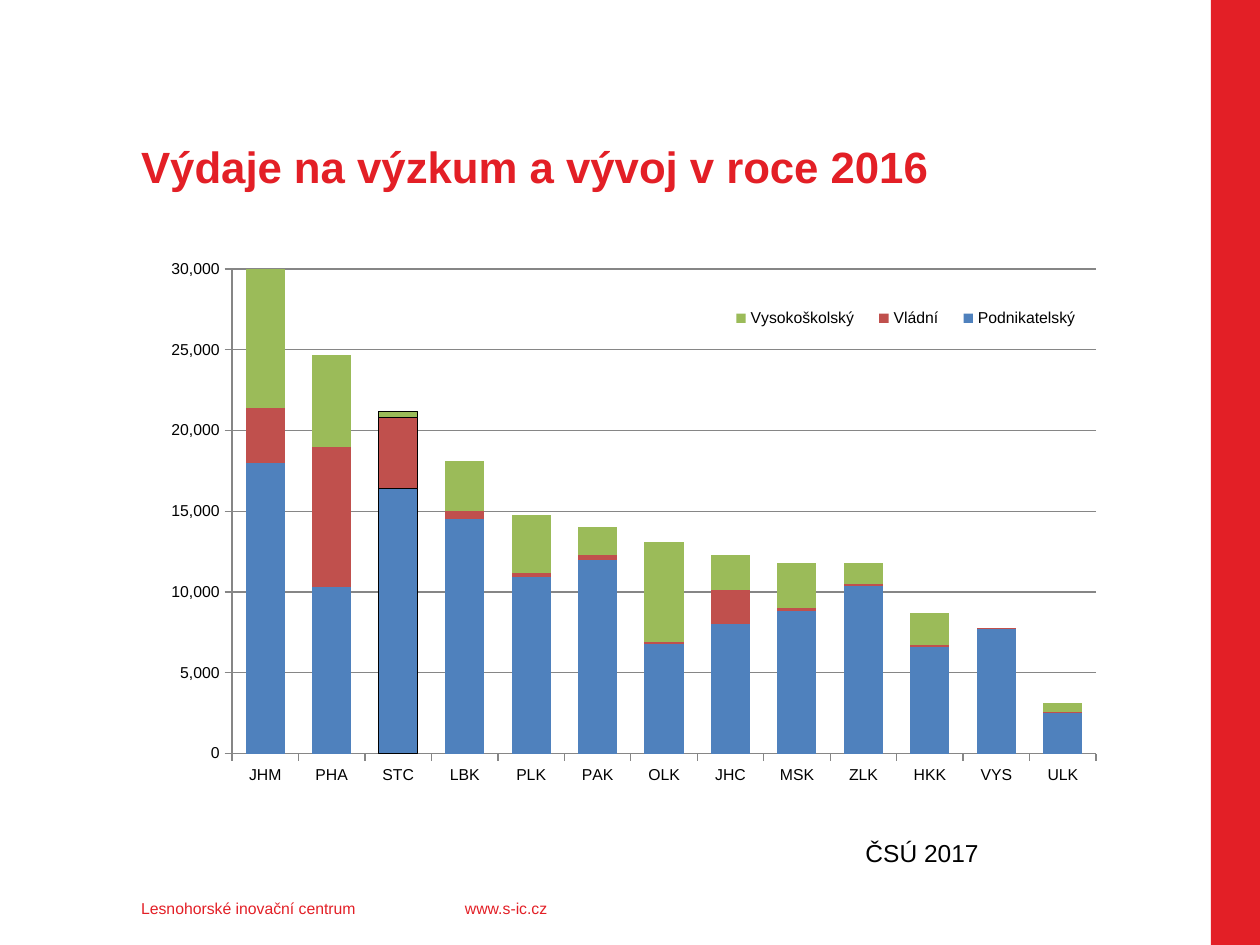
from lxml import etree
from pptx import Presentation
from pptx.chart.data import CategoryChartData
from pptx.dml.color import RGBColor
from pptx.enum.chart import XL_CHART_TYPE, XL_LEGEND_POSITION, XL_TICK_MARK
from pptx.enum.shapes import MSO_SHAPE
from pptx.enum.text import MSO_ANCHOR
from pptx.oxml.ns import qn
from pptx.util import Inches, Pt

STACKED = XL_CHART_TYPE.COLUMN_STACKED
RIGHT = XL_LEGEND_POSITION.RIGHT
OUT = XL_TICK_MARK.OUTSIDE
RECT = MSO_SHAPE.RECTANGLE
TOP, BOTTOM = MSO_ANCHOR.TOP, MSO_ANCHOR.BOTTOM

FONT = "Arial"
RED, BLACK, GREY = "E31F26", "000000", "868686"
REGIONS = ["JHM", "PHA", "STC", "LBK", "PLK", "PAK", "OLK",
           "JHC", "MSK", "ZLK", "HKK", "VYS", "ULK"]
SECTORS = [
    ("Podnikatelský", "4F81BD", [18000, 10300, 16400, 14500, 10900, 12000, 6800,
                                 8000, 8800, 10400, 6600, 7700, 2500]),
    ("Vládní", "C0504D", [3400, 8700, 4400, 500, 300, 300, 100,
                          2100, 200, 100, 100, 100, 100]),
    ("Vysokoškolský", "9BBB59", [8700, 5700, 400, 3100, 3600, 1700, 6200,
                                 2200, 2800, 1300, 2000, 0, 500]),
]


def color(code):
    return RGBColor.from_string(code)


def add_bar(slide, box, code):
    bar = slide.shapes.add_shape(RECT, *map(Inches, box))
    bar.shadow.inherit = False
    bar.fill.solid()
    bar.fill.fore_color.rgb = color(code)
    bar.line.fill.background()


def add_text(slide, box, text, size, code, bold=False, anchor=TOP,
             inset=0, wrap=True):
    frame = slide.shapes.add_textbox(*map(Inches, box)).text_frame
    frame.word_wrap = wrap
    frame.vertical_anchor = anchor
    frame.margin_left = frame.margin_right = Inches(inset)
    frame.margin_top = frame.margin_bottom = Inches(inset / 2)
    para = frame.paragraphs[0]
    para.text = text
    font = para.font
    font.name, font.size, font.bold = FONT, Pt(size), bold
    font.color.rgb = color(code)
    return para


def set_layout(parent, after, box, inner=False):
    for old in parent.findall(qn("c:layout")):
        parent.remove(old)
    layout = etree.Element(qn("c:layout"))
    manual = etree.SubElement(layout, qn("c:manualLayout"))
    parts = [("layoutTarget", "inner")] if inner else []
    parts += [("xMode", "edge"), ("yMode", "edge")]
    parts += zip("xywh", box)
    for tag, val in parts:
        etree.SubElement(manual, qn("c:" + tag)).set("val", str(val))
    if after is None:
        parent.insert(0, layout)
    else:
        after.addnext(layout)


def style_axis(axis):
    axis.major_tick_mark = OUT
    axis.format.line.color.rgb = color(GREY)
    axis.format.line.width = Pt(0.75)


def add_chart(slide, box, mark):
    data = CategoryChartData(number_format="#,##0")
    data.categories = REGIONS
    for name, _, vals in SECTORS:
        data.add_series(name, vals)
    chart = slide.shapes.add_chart(STACKED, *map(Inches, box), data).chart
    chart.has_title = False
    chart.font.name, chart.font.size = FONT, Pt(9)
    chart.font.color.rgb = color(BLACK)

    plot = chart.plots[0]
    plot.gap_width, plot.overlap = 70, 100
    plot.vary_by_categories = False
    for series, (_, code, _) in zip(plot.series, SECTORS):
        series.format.fill.solid()
        series.format.fill.fore_color.rgb = color(code)
        point = series.points[REGIONS.index(mark)].format
        point.fill.solid()
        point.fill.fore_color.rgb = color(code)
        point.line.color.rgb = color(BLACK)
        point.line.width = Pt(0.75)

    axis = chart.value_axis
    axis.minimum_scale, axis.maximum_scale, axis.major_unit = 0, 30000, 5000
    axis.tick_labels.number_format = "#,##0"
    axis.tick_labels.number_format_is_linked = False
    axis.has_major_gridlines = True
    grid = axis.major_gridlines.format.line
    grid.color.rgb = color(GREY)
    grid.width = Pt(0.75)
    style_axis(axis)
    style_axis(chart.category_axis)

    chart.has_legend = True
    legend = chart.legend
    legend.position = RIGHT
    legend.include_in_layout = True
    legend.font.name, legend.font.size = FONT, Pt(9)
    root = chart.element
    area = root.find(".//" + qn("c:plotArea"))
    set_layout(area, None, (0.114, 0.042, 0.867, 0.868), inner=True)
    key = root.find(".//" + qn("c:legend"))
    set_layout(key, key.find(qn("c:legendPos")), (0.6, 0.08, 0.38, 0.1))


def main():
    deck = Presentation()
    deck.slide_width, deck.slide_height = Inches(10), Inches(7.5)
    slide = deck.slides.add_slide(deck.slide_layouts[6])
    add_bar(slide, (9.61, 0, 0.39, 7.5), RED)
    owner = add_text(slide, (1.12, 6.79, 1.78, 0.49),
                     "Lesnohorské inovační centrum", 9, RED, anchor=BOTTOM)
    owner.line_spacing = Pt(26)
    add_text(slide, (3.69, 6.79, 1.78, 0.49), "www.s-ic.cz", 9, RED,
             anchor=BOTTOM)
    add_text(slide, (1.12, 1.11, 7.93, 0.84),
             "Výdaje na výzkum a vývoj v roce 2016", 25, RED, bold=True)
    add_chart(slide, (0.94, 1.95, 7.91, 4.43), "STC")
    add_text(slide, (6.77, 6.6, 1.11, 0.34), "ČSÚ 2017", 14, BLACK,
             inset=0.1, wrap=False)
    deck.save("out.pptx")


if __name__ == "__main__":
    main()
